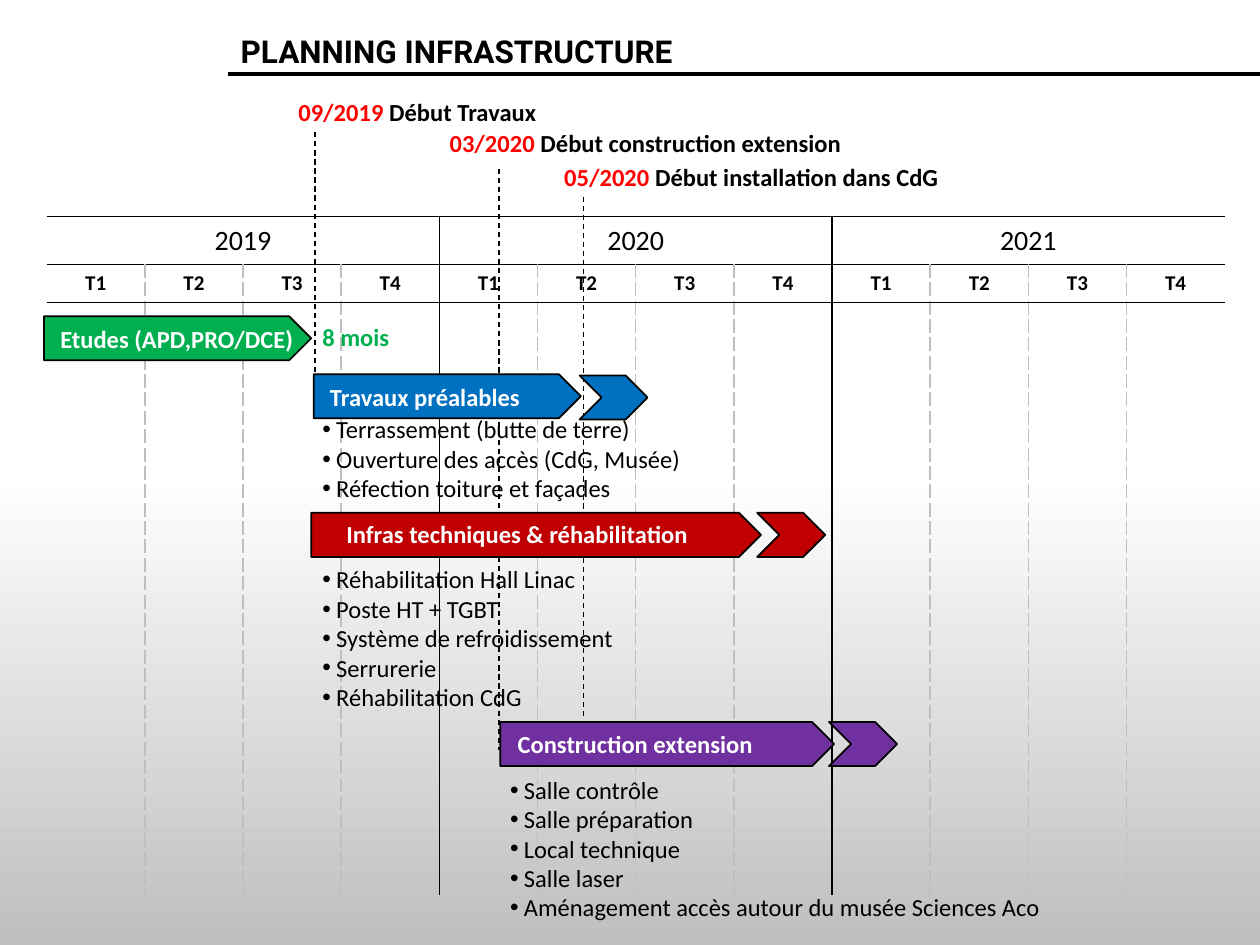
from lxml.etree import SubElement
from pptx import Presentation
from pptx.dml.color import RGBColor
from pptx.enum.dml import MSO_LINE
from pptx.enum.shapes import MSO_CONNECTOR, MSO_SHAPE
from pptx.enum.text import MSO_ANCHOR, MSO_AUTO_SIZE, PP_ALIGN
from pptx.oxml.ns import qn
from pptx.util import Inches, Pt

BLACK, GREY, WHITE = "000000", "BFBFBF", "FFFFFF"
RED, GREEN = "FF0000", "00B050"
NO_STYLE = "{2D5ABB26-0587-4C30-8999-92F81FD0307C}"
BAR_HEIGHT = 0.35
LABEL = {"name": "Calibri", "size": Pt(14), "bold": True}
ITEM = {**LABEL, "bold": False}
YEAR = {"name": "Calibri", "size": Pt(16), "bold": False}
QUARTER = {"name": "Calibri", "size": Pt(12), "bold": True}
HEADING = {"name": "Roboto", "size": Pt(18), "bold": True}
FRAME = {"word_wrap": True, "auto_size": MSO_AUTO_SIZE.NONE,
         "vertical_anchor": MSO_ANCHOR.TOP}
CELL = {"margin_left": Inches(0.05), "margin_right": Inches(0.05),
        "margin_top": Inches(0.03), "margin_bottom": Inches(0.03),
        "vertical_anchor": MSO_ANCHOR.MIDDLE}

MILESTONES = [
    ("09/2019 ", "Début Travaux", (2.27, 0.72, 2.33, 0.34)),
    ("03/2020 ", "Début construction extension", (3.47, 0.97, 4.12, 0.34)),
    ("05/2020 ", "Début installation dans CdG", (4.38, 1.24, 3.77, 0.34)),
]
MARKERS = [(3.96, 1.34, 5.95), (4.63, 1.56, 5.69), (2.5, 1.05, 2.98)]
PHASES = [
    {"label": "Etudes (APD,PRO/DCE)", "color": GREEN,
     "bar": (0.35, 2.51, 2.12), "label_box": (0.38, 2.52, 2.11, 0.34)},
    {"label": "Travaux préalables", "color": "0070C0",
     "bar": (2.49, 2.97, 2.12), "label_box": (2.52, 2.98, 2.11, 0.34),
     "overrun": (4.6, 2.98), "task_box": (2.46, 3.24, 3.23, 0.81),
     "tasks": ["Terrassement (butte de terre)",
               "Ouverture des accès (CdG, Musée)",
               "Réfection toiture et façades"]},
    {"label": "Infras techniques & réhabilitation", "color": "C00000",
     "bar": (2.47, 4.07, 3.57), "label_box": (2.65, 4.07, 3.21, 0.57),
     "overrun": (6.01, 4.07), "task_box": (2.46, 4.43, 4.19, 1.28),
     "tasks": ["Réhabilitation Hall Linac", "Poste HT + TGBT",
               "Système de refroidissement", "Serrurerie",
               "Réhabilitation CdG"]},
    {"label": "Construction extension", "color": "7030A0",
     "bar": (3.97, 5.73, 2.65), "label_box": (4.01, 5.74, 2.62, 0.34),
     "overrun": (6.58, 5.73), "task_box": (3.95, 6.1, 4.53, 1.28),
     "tasks": ["Salle contrôle", "Salle préparation", "Local technique",
               "Salle laser",
               "Aménagement accès autour du musée Sciences Aco"]},
]


def rgb(color):
    return RGBColor.from_string(color)


def apply(target, values):
    for key, value in values.items():
        setattr(target, key, value)


def inches(values):
    return [Inches(value) for value in values]


def add_run(paragraph, text, style, color):
    run = paragraph.add_run()
    run.text = text
    apply(run.font, style)
    run.font.color.rgb = rgb(color)


def add_text(shapes, box, parts, style=LABEL):
    frame = shapes.add_textbox(*inches(box)).text_frame
    apply(frame, FRAME)
    for text, color in parts:
        add_run(frame.paragraphs[0], text, style, color)


def add_tasks(shapes, box, tasks):
    frame = shapes.add_textbox(*inches(box)).text_frame
    apply(frame, FRAME)
    for index, task in enumerate(tasks):
        paragraph = frame.add_paragraph() if index else frame.paragraphs[0]
        properties = paragraph._p.get_or_add_pPr()
        properties.set("marL", str(Inches(0.11)))
        properties.set("indent", str(-Inches(0.11)))
        SubElement(properties, qn("a:buFont"), typeface="Arial")
        SubElement(properties, qn("a:buChar"), char="•")
        add_run(paragraph, task, ITEM, BLACK)


def add_arrow(shapes, kind, box, color):
    arrow = shapes.add_shape(kind, *inches(box))
    arrow.shadow.inherit = False
    arrow.fill.solid()
    arrow.fill.fore_color.rgb = rgb(color)
    arrow.line.color.rgb = rgb(BLACK)
    arrow.line.width = Pt(1)


def add_line(shapes, start, end, width, dash=None):
    line = shapes.add_connector(MSO_CONNECTOR.STRAIGHT, *inches(start + end))
    line.line.color.rgb = rgb(BLACK)
    line.line.width = Pt(width)
    line.line.dash_style = dash
    SubElement(line._element.spPr, qn("a:effectLst"))


def add_phase(shapes, phase):
    group = shapes.add_group_shape().shapes
    if "tasks" in phase:
        add_tasks(group, phase["task_box"], phase["tasks"])
    add_arrow(group, MSO_SHAPE.PENTAGON, (*phase["bar"], BAR_HEIGHT),
              phase["color"])
    add_text(group, phase["label_box"], [(phase["label"], WHITE)])
    if "overrun" in phase:
        add_arrow(group, MSO_SHAPE.CHEVRON,
                  (*phase["overrun"], 0.54, BAR_HEIGHT), phase["color"])


def column_edge(row, boundary):
    if boundary in (0, 12):
        return None
    if boundary % 4 == 0:
        return BLACK, "solid"
    return (GREY, "sysDash") if row else None


def set_borders(cell, row, column):
    rule = (BLACK, "solid")
    edges = {"a:lnL": column_edge(row, column),
             "a:lnR": column_edge(row, column + 1),
             "a:lnT": rule, "a:lnB": rule if row < 2 else None}
    properties = cell._tc.get_or_add_tcPr()
    for tag, edge in edges.items():
        if edge:
            color, dash = edge
            border = SubElement(properties, qn(tag), w=str(Pt(1)))
            fill = SubElement(border, qn("a:solidFill"))
            SubElement(fill, qn("a:srgbClr"), val=color)
            SubElement(border, qn("a:prstDash"), val=dash)


def write_cell(cell, text, style):
    paragraph = cell.text_frame.paragraphs[0]
    paragraph.alignment = PP_ALIGN.CENTER
    add_run(paragraph, text, style, BLACK)


def add_calendar(shapes):
    frame = shapes.add_table(3, 12, *inches((0.37, 1.72, 9.35, 5.38)))
    calendar = frame.table
    apply(calendar, {"first_row": False, "horz_banding": False})
    calendar._tbl.tblPr.find(qn("a:tableStyleId")).text = NO_STYLE
    for row, height in zip(calendar.rows, (0.38, 0.3, 4.7)):
        row.height = Inches(height)
    for row in range(3):
        for column in range(12):
            cell = calendar.cell(row, column)
            apply(cell, CELL)
            set_borders(cell, row, column)
            cell.fill.background()
    for column in range(12):
        write_cell(calendar.cell(1, column), f"T{column % 4 + 1}", QUARTER)
    for index, year in enumerate(("2019", "2020", "2021")):
        first = calendar.cell(0, index * 4)
        first.merge(calendar.cell(0, index * 4 + 3))
        write_cell(first, year, YEAR)


def set_background(slide):
    fill = slide.background.fill
    fill.gradient()
    fill.gradient_angle = 270
    for stop, position, color in zip(fill.gradient_stops, (0.5, 1), (WHITE, GREY)):
        stop.position = position
        stop.color.rgb = rgb(color)


def set_title(title, text):
    box = inches((1.81, 0.2, 8.19, 0.4))
    apply(title, dict(zip(("left", "top", "width", "height"), box)))
    apply(title.text_frame, FRAME)
    paragraph = title.text_frame.paragraphs[0]
    paragraph.alignment = PP_ALIGN.LEFT
    add_run(paragraph, text, HEADING, BLACK)


def main():
    deck = Presentation()
    apply(deck, {"slide_width": Inches(10), "slide_height": Inches(7.5)})
    slide = deck.slides.add_slide(deck.slide_layouts[5])
    shapes = slide.shapes
    set_background(slide)
    set_title(shapes.title, "PLANNING INFRASTRUCTURE")
    add_line(shapes, (10, 0.59), (1.81, 0.59), 2.25)
    add_calendar(shapes)
    for x, top, bottom in MARKERS:
        add_line(shapes, (x, top), (x, bottom), 0.75, MSO_LINE.DASH)
    add_text(shapes, (2.46, 2.51, 0.78, 0.34), [("8 mois", GREEN)])
    for date, event, box in MILESTONES:
        add_text(shapes, box, [(date, RED), (event, BLACK)])
    for phase in PHASES:
        add_phase(shapes, phase)
    deck.save("out.pptx")


if __name__ == "__main__":
    main()
